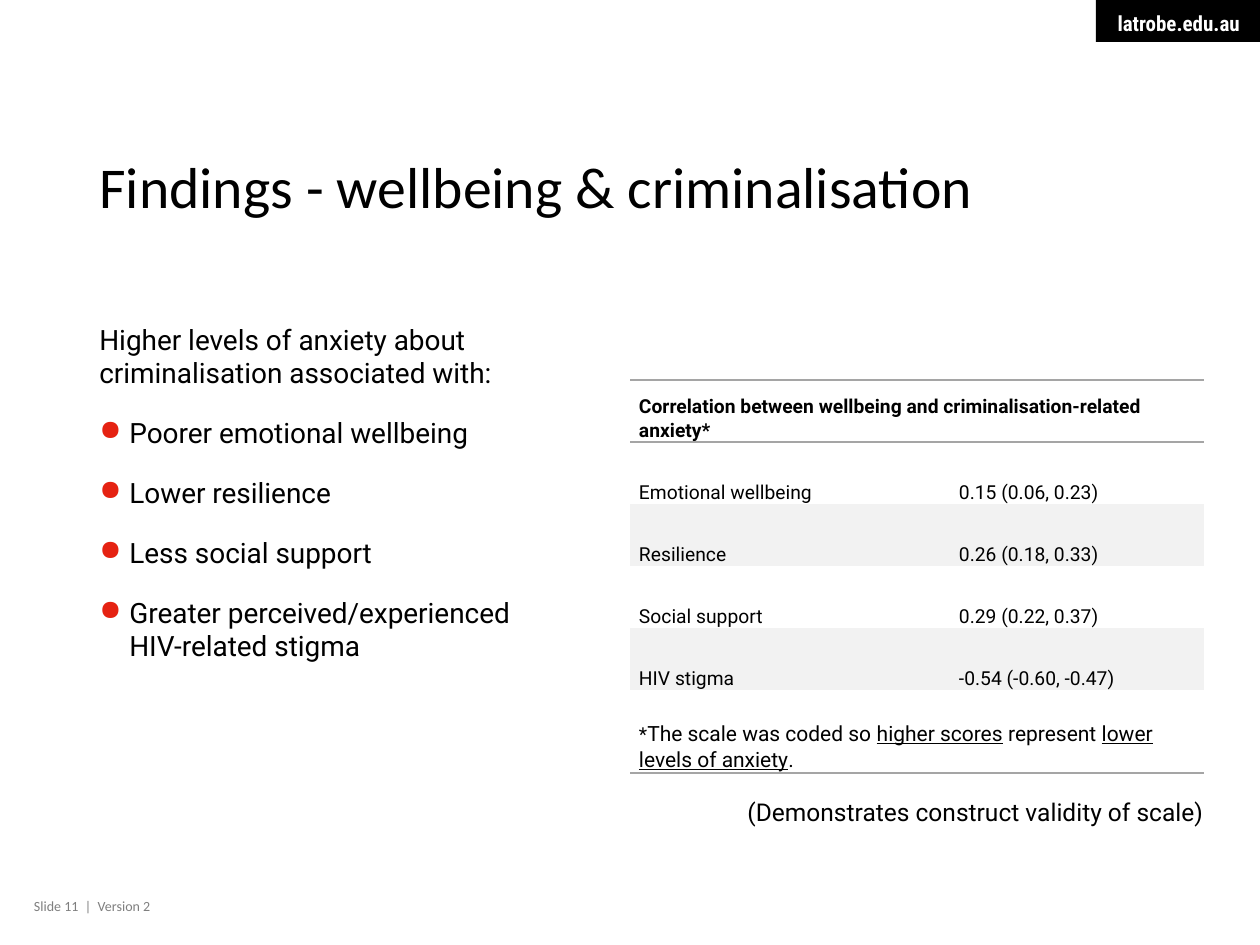
from lxml import etree
from pptx import Presentation
from pptx.dml.color import RGBColor
from pptx.enum.shapes import MSO_SHAPE
from pptx.enum.text import MSO_ANCHOR, PP_ALIGN
from pptx.oxml.ns import qn
from pptx.util import Emu, Pt

RECTANGLE = MSO_SHAPE.RECTANGLE
MIDDLE, BOTTOM = MSO_ANCHOR.MIDDLE, MSO_ANCHOR.BOTTOM
LEFT, RIGHT = PP_ALIGN.LEFT, PP_ALIGN.RIGHT
PX = 914400 // 126
NO_TABLE_STYLE = "{2D5ABB26-0587-4C30-8999-92F81FD0307C}"
BLACK, WHITE, GREY, RULE, BAND, RED = "000000", "FFFFFF", "7F7F7F", "A5A5A5", "F2F2F2", "E52212"

ADDRESS = "latrobe.edu.au"
FOOTER = "Slide 11  |  Version 2"
TITLE = "Findings - wellbeing & criminalisation"
INTRO = "Higher levels of anxiety about criminalisation associated with:"
FACTORS = [
    "Poorer emotional wellbeing",
    "Lower resilience",
    "Less social support",
    "Greater perceived/experienced HIV-related stigma",
]
TABLE_HEADING = "Correlation between wellbeing and criminalisation-related anxiety*"
CORRELATIONS = [
    ("Emotional wellbeing", "0.15 (0.06, 0.23)"),
    ("Resilience", "0.26 (0.18, 0.33)"),
    ("Social support", "0.29 (0.22, 0.37)"),
    ("HIV stigma", "-0.54 (-0.60, -0.47)"),
]
FOOTNOTE = [
    ("*", 11, False),
    ("The scale was coded so ", 12, False),
    ("higher scores", 12, True),
    (" represent ", 12, False),
    ("lower levels of anxiety", 12, True),
    (".", 12, False),
]
CONCLUSION = "(Demonstrates construct validity of scale)"
COLUMN_WIDTHS = [320, 254]
ROW_HEIGHT, FOOTNOTE_HEIGHT = 62, 83


def px(length):
    return Emu(length * PX)


def color(value):
    return RGBColor.from_string(value)


def set_font(font, name, size, value=BLACK, bold=False):
    font.name, font.size, font.bold = name, Pt(size), bold
    font.color.rgb = color(value)


def set_margins(target, left, top, right, bottom):
    target.margin_left, target.margin_top = px(left), px(top)
    target.margin_right, target.margin_bottom = px(right), px(bottom)


def add_text(page, place, lines, name, size, value=BLACK, align=LEFT):
    frame = page.shapes.add_textbox(*map(px, place)).text_frame
    frame.word_wrap = True
    for index, line in enumerate(lines):
        para = frame.paragraphs[0] if index == 0 else frame.add_paragraph()
        para.text, para.alignment = line, align
        set_font(para.font, name, size, value)
    return frame


def add_bullet(para):
    properties = para._p.get_or_add_pPr()
    properties.set("marL", str(px(30)))
    properties.set("indent", str(px(-30)))
    bullet_color = etree.Element(qn("a:buClr"))
    etree.SubElement(bullet_color, qn("a:srgbClr"), val=RED)
    bullet = etree.Element(qn("a:buChar"), char="●")
    position = 0 if properties.find(qn("a:defRPr")) is not None else len(properties)
    properties.insert(position, bullet_color)
    properties.insert(position + 1, bullet)


def add_border(cell, side):
    properties = cell._tc.get_or_add_tcPr()
    line = etree.Element(qn("a:ln" + side), w=str(Pt(1)))
    fill = etree.SubElement(line, qn("a:solidFill"))
    etree.SubElement(fill, qn("a:srgbClr"), val=RULE)
    position = len(properties.findall(qn("a:lnT")))
    properties.insert(position, line)


def fill_cell(cell, spans, bold=False, band=False):
    cell.vertical_anchor = BOTTOM
    set_margins(cell, 9, 0, 9, 0)
    if band:
        cell.fill.solid()
        cell.fill.fore_color.rgb = color(BAND)
    else:
        cell.fill.background()
    para = cell.text_frame.paragraphs[0]
    para.line_spacing, para.space_after = 1.07, Pt(8)
    set_font(para.font, "Roboto", 11, bold=bold)
    for text, size, underline in spans:
        span = para.add_run()
        span.text = text
        set_font(span.font, "Roboto", size, bold=bold)
        if underline:
            span.font.underline = True


def add_correlations(page):
    count = len(CORRELATIONS) + 2
    heights = [ROW_HEIGHT] * (count - 1) + [FOOTNOTE_HEIGHT]
    place = (630, 380, sum(COLUMN_WIDTHS), sum(heights))
    frame = page.shapes.add_table(count, 2, *map(px, place))
    next(frame.element.iter(qn("a:tableStyleId"))).text = NO_TABLE_STYLE
    table = frame.table
    table.first_row = table.horz_banding = False
    for column, width in zip(table.columns, COLUMN_WIDTHS):
        column.width = px(width)
    for row, height in zip(table.rows, heights):
        row.height = px(height)
    for index, sides in ((0, "TB"), (count - 1, "B")):
        table.cell(index, 0).merge(table.cell(index, 1))
        for column in range(2):
            for side in sides:
                add_border(table.cell(index, column), side)
    fill_cell(table.cell(0, 0), [(TABLE_HEADING, 11, False)], bold=True)
    for index, values in enumerate(CORRELATIONS, 1):
        for column, text in enumerate(values):
            fill_cell(table.cell(index, column), [(text, 11, False)], band=index % 2 == 0)
    fill_cell(table.cell(count - 1, 0), FOOTNOTE)


def add_address(page):
    box = page.shapes.add_shape(RECTANGLE, *map(px, (1096, 0, 164, 42)))
    box.shadow.inherit = False
    box.fill.solid()
    box.fill.fore_color.rgb = color(BLACK)
    box.line.fill.background()
    frame = box.text_frame
    frame.word_wrap = False
    frame.vertical_anchor = MIDDLE
    set_margins(frame, 20, 10, 20, 6)
    para = frame.paragraphs[0]
    para.text, para.alignment = ADDRESS, RIGHT
    set_font(para.font, "Roboto Condensed", 12, WHITE, True)


def main():
    deck = Presentation()
    deck.slide_width, deck.slide_height = px(1260), px(945)
    page = deck.slides.add_slide(deck.slide_layouts[6])
    add_address(page)
    footer = add_text(page, (34, 891, 339, 30), [FOOTER], "Calibri", 8, GREY)
    footer.margin_left = 0
    title = add_text(page, (87, 98, 1118, 183), [TITLE], "Calibri", 33)
    title.vertical_anchor = MIDDLE
    title.paragraphs[0].line_spacing = 0.9
    add_correlations(page)
    findings = add_text(page, (87, 316, 490, 329), [INTRO, *FACTORS], "Roboto", 16)
    for para in findings.paragraphs:
        para.space_after = Pt(15)
    for para in findings.paragraphs[1:]:
        add_bullet(para)
    add_text(page, (616, 791, 600, 43), [CONCLUSION], "Roboto", 14, align=RIGHT)
    deck.save("out.pptx")


if __name__ == "__main__":
    main()
